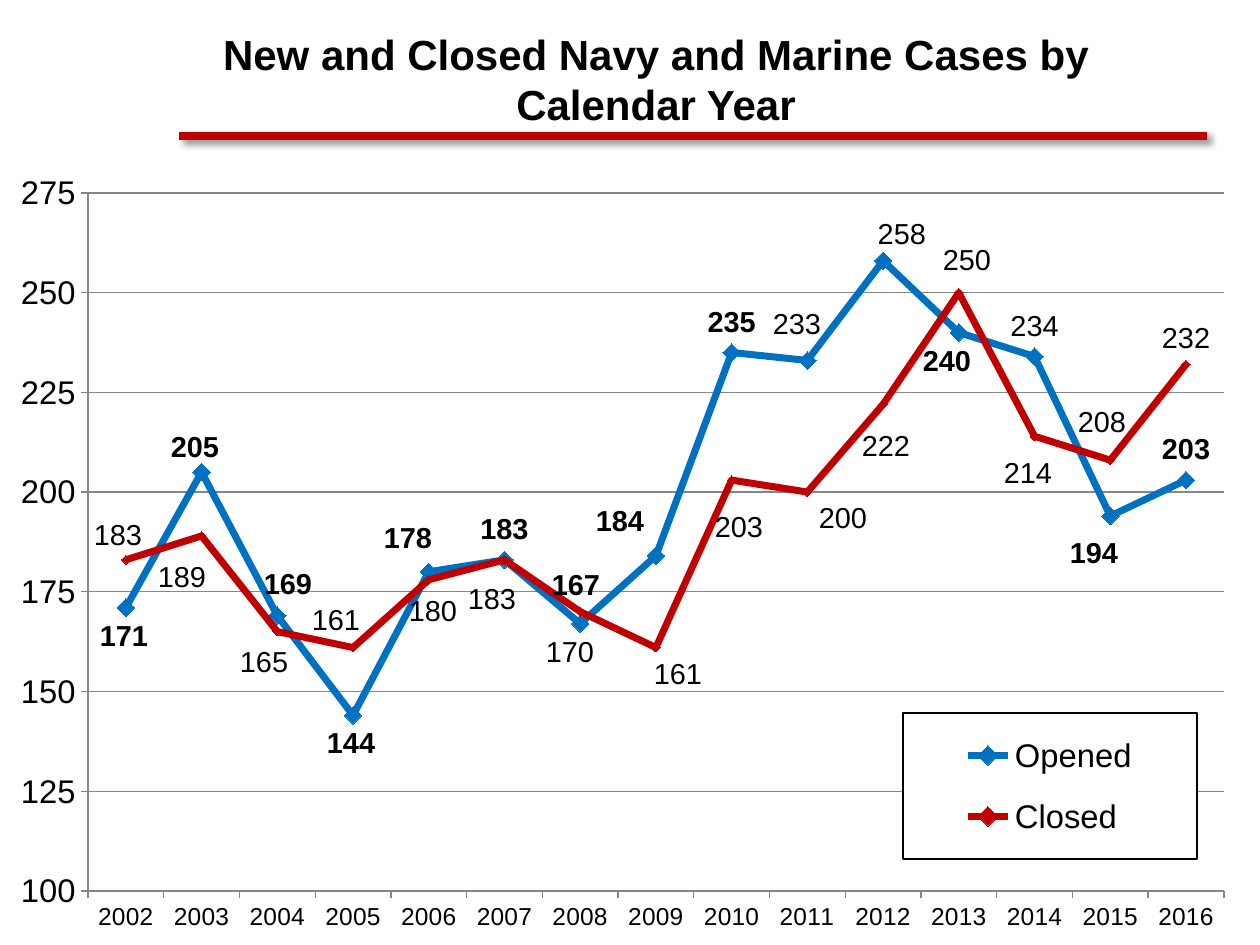
from lxml import etree
from pptx import Presentation
from pptx.chart.data import CategoryChartData
from pptx.dml.color import RGBColor
from pptx.enum.chart import (XL_CHART_TYPE, XL_LABEL_POSITION, XL_LEGEND_POSITION,
                             XL_MARKER_STYLE, XL_TICK_MARK)
from pptx.enum.shapes import MSO_CONNECTOR
from pptx.enum.text import MSO_ANCHOR, PP_ALIGN
from pptx.oxml import parse_xml
from pptx.oxml.ns import nsdecls, qn
from pptx.util import Emu, Pt

LINE_CHART = XL_CHART_TYPE.LINE_MARKERS
ABOVE = XL_LABEL_POSITION.ABOVE
LEGEND_BOTTOM = XL_LEGEND_POSITION.BOTTOM
DIAMOND = XL_MARKER_STYLE.DIAMOND
TICK_OUTSIDE = XL_TICK_MARK.OUTSIDE
TICK_NONE = XL_TICK_MARK.NONE
STRAIGHT = MSO_CONNECTOR.STRAIGHT
CENTER = PP_ALIGN.CENTER
MIDDLE = MSO_ANCHOR.MIDDLE

PIXELS_PER_INCH = 126
BLACK, BLUE, RED, GRAY = "000000", "0070C0", "C00000", "868686"

# Chart frame, plot area and legend: left, top, width, height
FRAME = (-9, 156, 1266, 781)
PLOT = (88, 193, 1136, 698)
LEGEND = (903, 713, 294, 146)
AXIS_MIN, AXIS_MAX, AXIS_STEP = 100, 275, 25
LABEL_RISE = 30

YEARS = [str(year) for year in range(2002, 2017)]
OPENED = [171, 205, 169, 144, 180, 183, 167, 184, 235, 233, 258, 240, 234, 194, 203]
CLOSED = [183, 189, 165, 161, 178, 183, 170, 161, 203, 200, 222, 250, 214, 208, 232]

# Centres of the labels that are moved, by year
OPENED_LABELS = {
    "2002": (124, 637), "2003": (195, 448), "2004": (288, 585), "2005": (351, 744),
    "2006": (408, 539), "2008": (576, 586), "2009": (620, 522), "2011": (797, 325),
    "2012": (902, 235), "2013": (947, 362), "2015": (1094, 554),
}
CLOSED_LABELS = {
    "2002": (118, 532), "2003": (182, 574), "2004": (264, 659), "2005": (336, 617),
    "2006": (433, 608), "2007": (492, 596), "2008": (570, 649), "2009": (678, 671),
    "2010": (739, 524), "2011": (843, 514), "2012": (886, 442), "2013": (967, 256),
    "2014": (1028, 469), "2015": (1102, 418),
}


def px(length):
    return Emu(round(length * 914400 / PIXELS_PER_INCH))


def color(hex_string):
    return RGBColor.from_string(hex_string)


def manual_layout(**settings):
    """Build a c:layout element from its settings, given in schema order."""
    layout = etree.Element(qn("c:layout"))
    manual = etree.SubElement(layout, qn("c:manualLayout"))
    for name, value in settings.items():
        etree.SubElement(manual, qn(f"c:{name}")).set("val", str(value))
    return layout


def box_layout(box, **target):
    """Place a box, given in slide pixels, inside the chart frame."""
    left, top, width, height = box
    return manual_layout(
        **target, xMode="edge", yMode="edge",
        x=round((left - FRAME[0]) / FRAME[2], 4), y=round((top - FRAME[1]) / FRAME[3], 4),
        w=round(width / FRAME[2], 4), h=round(height / FRAME[3], 4))


def label_layout(index, value, center):
    """Give the shift of a label from its usual place above the point."""
    left, top, width, height = PLOT
    point_x = left + width * (index + 0.5) / len(YEARS)
    point_y = top + height * (AXIS_MAX - value) / (AXIS_MAX - AXIS_MIN)
    return manual_layout(x=round((center[0] - point_x) / FRAME[2], 4),
                         y=round((center[1] - point_y + LABEL_RISE) / FRAME[3], 4))


class SlideBuilder:
    font_name = "Arial"

    def __init__(self, slide):
        self.slide = slide

    def style_font(self, font, size, bold=False):
        font.name = self.font_name
        font.size = Pt(size)
        font.bold = bold
        font.color.rgb = color(BLACK)

    def title(self, text, left, top, width, height):
        shape = self.slide.shapes.title
        shape.left, shape.top, shape.width, shape.height = map(px, (left, top, width, height))
        shape.text_frame.text = text
        shape.text_frame.word_wrap = True
        shape.text_frame.vertical_anchor = MIDDLE
        paragraph = shape.text_frame.paragraphs[0]
        paragraph.alignment = CENTER
        self.style_font(paragraph.runs[0].font, 24, True)

    def shadowed_rule(self, left, right, y):
        rule = self.slide.shapes.add_connector(STRAIGHT, px(left), px(y), px(right), px(y))
        rule.line.color.rgb = color(RED)
        rule.line.width = Pt(5)
        rule._element.spPr.append(parse_xml(
            f'<a:effectLst {nsdecls("a")}><a:outerShdw blurRad="50800" dist="38100" '
            'dir="2700000" algn="tl" rotWithShape="0"><a:srgbClr val="000000">'
            '<a:alpha val="40000"/></a:srgbClr></a:outerShdw></a:effectLst>'))

    def line_chart(self, categories, series_values):
        data = CategoryChartData()
        data.categories = categories
        for name, values in series_values.items():
            data.add_series(name, values)
        chart = self.slide.shapes.add_chart(LINE_CHART, *map(px, FRAME), data).chart
        chart.has_title = False
        self.style_font(chart.font, 18.7)
        chart.plots[0].vary_by_categories = False
        plot_area = chart._chartSpace.chart.plotArea
        for layout in plot_area.findall(qn("c:layout")):
            plot_area.remove(layout)
        plot_area.insert(0, box_layout(PLOT, layoutTarget="inner"))
        return chart

    def axes(self, chart):
        value_axis = chart.value_axis
        value_axis.minimum_scale, value_axis.maximum_scale = AXIS_MIN, AXIS_MAX
        value_axis.major_unit = AXIS_STEP
        value_axis.has_major_gridlines = True
        value_axis.major_gridlines.format.line.color.rgb = color(GRAY)
        for axis, size in ((value_axis, 18.7), (chart.category_axis, 14)):
            axis.major_tick_mark = TICK_OUTSIDE
            axis.minor_tick_mark = TICK_NONE
            axis.format.line.color.rgb = color(GRAY)
            self.style_font(axis.tick_labels.font, size)

    def series(self, series, hex_string, marker_size):
        series.smooth = False
        series.format.line.color.rgb = color(hex_string)
        series.format.line.width = Pt(4)
        series.marker.style = DIAMOND
        series.marker.size = marker_size
        series.marker.format.fill.solid()
        series.marker.format.fill.fore_color.rgb = color(hex_string)
        series.marker.format.line.color.rgb = color(hex_string)

    def labels(self, series, centers, bold, texts):
        """Label every point; move those with a centre and reword those in texts."""
        labels = series.data_labels
        labels.show_value = True
        labels.position = ABOVE
        self.style_font(labels.font, 16.5, bold)
        for leader_lines in labels._element.findall(qn("c:showLeaderLines")):
            leader_lines.set("val", "0")
        for index, (year, value) in enumerate(zip(YEARS, series.values)):
            if year not in centers:
                continue
            label = series.points[index].data_label
            if year in texts:
                label.text_frame.text = texts[year]
                self.style_font(label.text_frame.paragraphs[0].runs[0].font, 16.5, bold)
            else:
                self.style_font(label.font, 16.5, bold)
            label.position = ABOVE
            label_element = labels._element.find(f"{qn('c:dLbl')}[{index_position(labels, index)}]")
            label_element.find(qn("c:idx")).addnext(label_layout(index, value, centers[year]))

    def legend(self, chart):
        chart.has_legend = True
        legend = chart.legend
        legend.position = LEGEND_BOTTOM
        legend.include_in_layout = True
        self.style_font(legend.font, 18.7)
        element = legend._element
        for layout in element.findall(qn("c:layout")):
            element.remove(layout)
        element.find(qn("c:legendPos")).addnext(box_layout(LEGEND))
        element.find(qn("c:overlay")).addnext(parse_xml(
            f'<c:spPr {nsdecls("c", "a")}><a:solidFill><a:srgbClr val="FFFFFF"/></a:solidFill>'
            '<a:ln w="19050"><a:solidFill><a:srgbClr val="000000"/></a:solidFill></a:ln></c:spPr>'))


def index_position(labels, index):
    """Find the one-based place of a point's label among the series' labels."""
    indexes = [label.find(qn("c:idx")).get("val") for label in labels._element.findall(qn("c:dLbl"))]
    return indexes.index(str(index)) + 1


def main():
    presentation = Presentation()
    presentation.slide_width, presentation.slide_height = px(1260), px(945)
    builder = SlideBuilder(presentation.slides.add_slide(presentation.slide_layouts[5]))
    builder.shadowed_rule(179, 1207, 136)
    builder.title("New and Closed Navy and Marine Cases by Calendar Year", 199, 21, 914, 115)
    chart = builder.line_chart(YEARS, {"Opened": OPENED, "Closed": CLOSED})
    builder.axes(chart)
    opened, closed = chart.plots[0].series
    builder.series(opened, BLUE, 10)
    builder.series(closed, RED, 5)
    builder.labels(opened, OPENED_LABELS, True,
                   {"2006": "178"})
    builder.labels(closed, CLOSED_LABELS, False, {"2006": "180"})
    # These labels of the opened cases are in regular weight
    for year in ("2011", "2012", "2014"):
        label = opened.points[YEARS.index(year)].data_label
        builder.style_font(label.font, 16.5)
        label.position = ABOVE
    builder.legend(chart)
    presentation.save("out.pptx")


if __name__ == "__main__":
    main()
